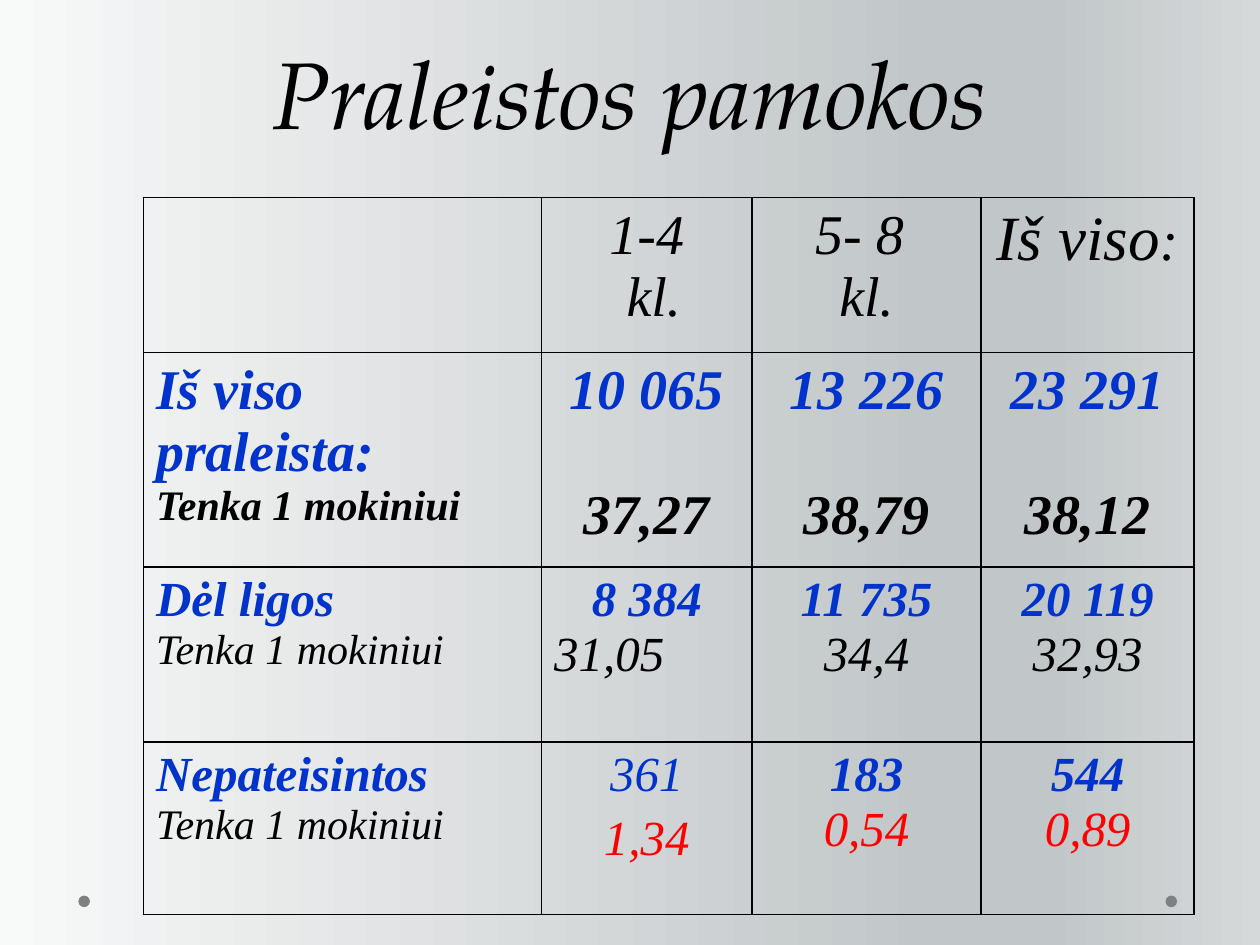
"""Build the slide of missed lessons by grade group."""
from dataclasses import dataclass

from lxml.etree import SubElement
from pptx import Presentation
from pptx.dml.color import RGBColor
from pptx.enum.shapes import MSO_SHAPE as Shape
from pptx.enum.text import MSO_ANCHOR as Anchor, MSO_AUTO_SIZE as AutoSize, PP_ALIGN as Align
from pptx.oxml.ns import qn
from pptx.util import Pt


@dataclass(frozen=True)
class Theme:
    black: str = "000000"
    blue: str = "0033CC"
    red: str = "FF0000"
    dot: str = "808080"
    backdrop: tuple = ((0, "F8F9F9"), (74, "C1C6C8"), (83, "C1C6C8"), (100, "D6D9DA"))
    title_font: str = "TeX Gyre Pagella"
    table_font: str = "Times New Roman"
    title: int = 54
    total: int = 36
    large: int = 32
    medium: int = 28
    small: int = 24


theme = Theme()


def add_run(paragraph, text, size, color, bold=False, font=theme.table_font):
    run = paragraph.add_run()
    run.text = text
    run.font.name = font
    run.font.size = Pt(size)
    run.font.bold = bold
    run.font.italic = True
    run.font.color.rgb = RGBColor.from_string(color)


def add_border(cell):
    properties = cell._tc.get_or_add_tcPr()
    for position, side in enumerate(("lnL", "lnR", "lnT", "lnB")):
        line = SubElement(properties, qn(f"a:{side}"), w=str(Pt(1)))
        solid = SubElement(line, qn("a:solidFill"))
        SubElement(solid, qn("a:srgbClr"), val=theme.black)
        properties.insert(position, line)


deck = Presentation()
deck.slide_width, deck.slide_height = Pt(720), Pt(540)
slide = deck.slides.add_slide(deck.slide_layouts[5])

backdrop = slide.background.fill
backdrop.gradient()
backdrop.gradient_angle = 0
stops = slide.element.find(f".//{qn('a:gsLst')}")
for default_stop in list(stops):
    stops.remove(default_stop)
for percent, color in theme.backdrop:
    stop = SubElement(stops, qn("a:gs"), pos=str(percent * 1000))
    SubElement(stop, qn("a:srgbClr"), val=color)

for dot_left in (44.8, 666):
    dot = slide.shapes.add_shape(Shape.OVAL, Pt(dot_left), Pt(511.8), Pt(6.6), Pt(6.6))
    dot.shadow.inherit = False
    dot.fill.solid()
    dot.fill.fore_color.rgb = RGBColor.from_string(theme.dot)
    dot.line.fill.background()

heading = slide.shapes.title
heading.left, heading.top, heading.width, heading.height = Pt(36), Pt(0), Pt(648), Pt(88.5)
heading.text_frame.auto_size = AutoSize.NONE
heading.text_frame.vertical_anchor = Anchor.BOTTOM
heading_line = heading.text_frame.paragraphs[0]
heading_line.alignment = Align.CENTER
heading_line.line_spacing = Pt(58)
add_run(heading_line, "Praleistos pamokos", theme.title, theme.black, font=theme.title_font)

per_pupil = "Tenka 1 mokiniui"
grade_headers = [
    [],
    [[("1-4", theme.large, theme.black)], [(" kl.", theme.large, theme.black)]],
    [[("5- 8 ", theme.large, theme.black)], [("kl.", theme.large, theme.black)]],
    [[("Iš viso", theme.total, theme.black), (":", theme.large, theme.black)]],
]
categories = [
    ("Iš viso praleista:", theme.large, theme.black, True,
     (("10 065", "37,27"), ("13 226", "38,79"), ("23 291", "38,12"))),
    ("Dėl ligos", theme.medium, theme.black, False,
     (("8 384", "31,05"), ("11 735", "34,4"), ("20 119", "32,93"))),
    ("Nepateisintos", theme.medium, theme.red, False,
     (("361", "1,34"), ("183", "0,54"), ("544", "0,89"))),
]

lesson_rows = [grade_headers]
for label, size, rate_color, rate_bold, figures in categories:
    row = [[[(label, size, theme.blue, True)], [(per_pupil, theme.small, theme.black, rate_bold)]]]
    for count, rate in figures:
        row.append([[(count, size, theme.blue, count != "361")],
                    [(rate, size, rate_color, rate_bold)]])
    lesson_rows.append(row)

column_widths = (227.5, 120.2, 131, 121.7)
row_heights = (88.6, 122.4, 100, 98.6)
lessons = slide.shapes.add_table(
    len(row_heights), len(column_widths), Pt(82), Pt(113),
    Pt(sum(column_widths)), Pt(sum(row_heights))).table
lessons.first_row = lessons.horz_banding = False
for column, width in zip(lessons.columns, column_widths):
    column.width = Pt(width)
for table_row, height in zip(lessons.rows, row_heights):
    table_row.height = Pt(height)

for row_index, row in enumerate(lesson_rows):
    for column_index, lines in enumerate(row):
        cell = lessons.cell(row_index, column_index)
        cell.fill.background()
        add_border(cell)
        for line_index, runs in enumerate(lines):
            frame = cell.text_frame
            paragraph = frame.add_paragraph() if line_index else frame.paragraphs[0]
            paragraph.alignment = Align.CENTER if column_index else Align.LEFT
            for run in runs:
                add_run(paragraph, *run)

for column_index in (1, 2, 3):
    lessons.cell(1, column_index).text_frame.paragraphs[1].space_before = Pt(36)
lessons.cell(2, 1).text_frame.paragraphs[1].alignment = Align.LEFT
lessons.cell(3, 1).text_frame.paragraphs[1].space_before = Pt(5.6)

deck.save("out.pptx")
